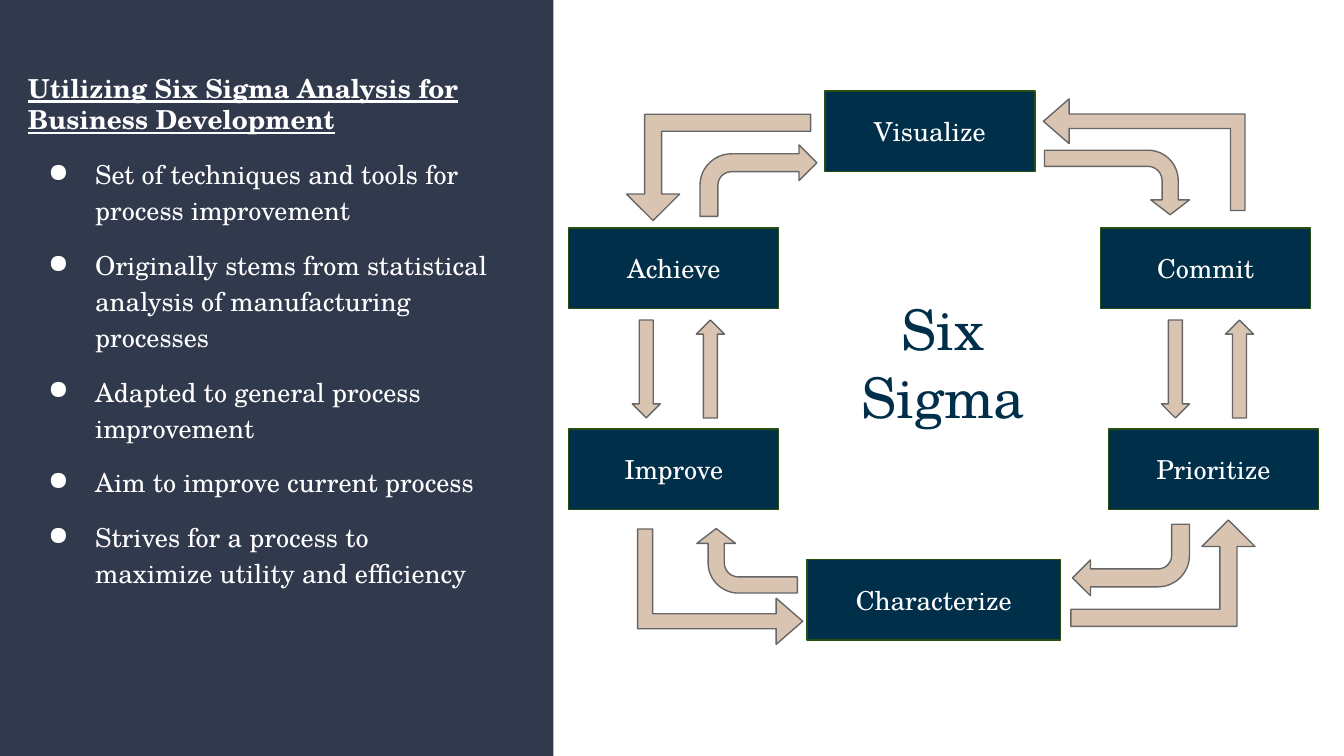
from lxml import etree
from pptx import Presentation
from pptx.dml.color import RGBColor
from pptx.enum.shapes import MSO_SHAPE
from pptx.enum.text import MSO_ANCHOR, PP_ALIGN
from pptx.oxml.ns import qn
from pptx.util import Cm, Pt

RECTANGLE = MSO_SHAPE.RECTANGLE
BENT = MSO_SHAPE.BENT_ARROW
BENT_UP = MSO_SHAPE.BENT_UP_ARROW
DOWN = MSO_SHAPE.DOWN_ARROW
MIDDLE = MSO_ANCHOR.MIDDLE
CENTER = PP_ALIGN.CENTER

COLORS = {
    "panel": "31394D",
    "navy": "002F4A",
    "box_line": "274E13",
    "arrow": "D9C4B1",
    "arrow_line": "666666",
    "white": "FFFFFF",
}

TITLE = "Utilizing Six Sigma Analysis for Business Development"
BULLETS = [
    "Set of techniques and tools for process improvement",
    "Originally stems from statistical analysis of manufacturing processes",
    "Adapted to general process improvement",
    "Aim to improve current process",
    "Strives for a process to maximize utility and efficiency",
]

BOX_WIDTH = 3.97
BOXES = [
    ("Visualize", 15.59, 1.72, BOX_WIDTH),
    ("Commit", 20.8, 4.31, BOX_WIDTH),
    ("Prioritize", 20.95, 8.11, BOX_WIDTH),
    ("Achieve", 10.75, 4.31, BOX_WIDTH),
    ("Improve", 10.75, 8.11, BOX_WIDTH),
    ("Characterize", 15.25, 10.58, 4.8),
]

WIDE_BEND = (0.25, 0.25, 0.25, 0.44)
TIGHT_BEND = (0.25, 0.3, 0.23, 0.47)
WIDE_CORNER = (0.16, 0.25, 0.25)
TIGHT_CORNER = (0.13, 0.2, 0.23)
BENT_ARROWS = [
    (BENT, (13.23, 2.74, 2.21, 1.35), 0, WIDE_BEND),
    (BENT, (20.5, 2.08, 1.22, 2.74), 90, TIGHT_BEND),
    (BENT, (20.27, 9.91, 2.21, 1.35), 180, WIDE_BEND),
    (BENT, (13.51, 9.65, 1.22, 1.9), 270, TIGHT_BEND),
    (BENT_UP, (11.84, 2.16, 3.48, 2.01), 180, WIDE_CORNER),
    (BENT_UP, (20.24, 9.83, 3.48, 2.01), 0, WIDE_CORNER),
    (BENT_UP, (12.52, 9.53, 2.18, 3.12), 90, TIGHT_CORNER),
    (BENT_UP, (20.57, 1.02, 2.11, 3.81), 270, TIGHT_CORNER),
]


class SlideBuilder:
    font_name = "TeX Gyre Schola"
    text_size = 14
    inset = 0.25
    line_width = 0.75

    def __init__(self, slide):
        self.slide = slide

    def color(self, name):
        return RGBColor.from_string(COLORS[name])

    def shape(self, kind, bounds, fill, line=None):
        shape = self.slide.shapes.add_shape(kind, *map(Cm, bounds))
        shape.shadow.inherit = False
        shape.fill.solid()
        shape.fill.fore_color.rgb = self.color(fill)
        if line:
            shape.line.color.rgb = self.color(line)
            shape.line.width = Pt(self.line_width)
        else:
            shape.line.fill.background()
        return shape

    def frame(self, shape):
        frame = shape.text_frame
        frame.word_wrap = True
        frame.margin_left = frame.margin_right = Cm(self.inset)
        frame.margin_top = frame.margin_bottom = Cm(self.inset)
        return frame

    def style(self, paragraph, color="white", size=text_size, heading=False):
        font = paragraph.font
        font.name = self.font_name
        font.size = Pt(size)
        font.color.rgb = self.color(color)
        font.bold = font.underline = heading

    def centered(self, shape, text, color="white", size=text_size):
        frame = self.frame(shape)
        frame.vertical_anchor = MIDDLE
        paragraph = frame.paragraphs[0]
        paragraph.text = text
        paragraph.alignment = CENTER
        self.style(paragraph, color, size)

    def box(self, text, left, top, width):
        shape = self.shape(RECTANGLE, (left, top, width, 1.52), "navy", "box_line")
        self.centered(shape, text)

    def label(self, text, bounds, color, size):
        shape = self.slide.shapes.add_textbox(*map(Cm, bounds))
        self.centered(shape, text, color, size)

    def arrow(self, kind, bounds, rotation, adjustments):
        shape = self.shape(kind, bounds, "arrow", "arrow_line")
        shape.rotation = rotation
        for index, value in enumerate(adjustments):
            shape.adjustments[index] = value

    def bullet(self, paragraph):
        properties = paragraph._p.get_or_add_pPr()
        properties.set("marL", str(Cm(1.27)))
        properties.set("indent", str(Cm(-0.89)))
        bullet_color = etree.SubElement(properties, qn("a:buClr"))
        etree.SubElement(bullet_color, qn("a:srgbClr"), val=COLORS["white"])
        etree.SubElement(properties, qn("a:buChar"), char="●")
        paragraph.line_spacing = 1.15
        paragraph.space_before = Pt(10)

    def outline(self, title, bullets, bounds):
        frame = self.frame(self.slide.shapes.add_textbox(*map(Cm, bounds)))
        heading = frame.paragraphs[0]
        heading.text = title
        self.style(heading, heading=True)
        for text in bullets:
            paragraph = frame.add_paragraph()
            paragraph.text = text
            self.bullet(paragraph)
            self.style(paragraph)
        paragraph.space_after = Pt(10)


def main():
    presentation = Presentation()
    presentation.slide_width = Cm(25.4)
    presentation.slide_height = Cm(14.29)
    slide = presentation.slides.add_slide(presentation.slide_layouts[6])
    builder = SlideBuilder(slide)

    builder.shape(RECTANGLE, (0, 0, 10.46, 14.29), "panel")
    builder.outline(TITLE, BULLETS, (0.28, 1.12, 9.3, 10.97))
    for box in BOXES:
        builder.box(*box)
    builder.label("Six Sigma", (15.6, 5.84, 4.45, 2.01), "navy", 30)
    for arrow in BENT_ARROWS:
        builder.arrow(*arrow)
    for left in (11.95, 21.95):
        for offset, rotation in ((0, 0), (1.21, 180)):
            bounds = (left + offset, 6.05, 0.53, 1.85)
            builder.arrow(DOWN, bounds, rotation, (0.5, 0.5))

    presentation.save("out.pptx")


if __name__ == "__main__":
    main()
